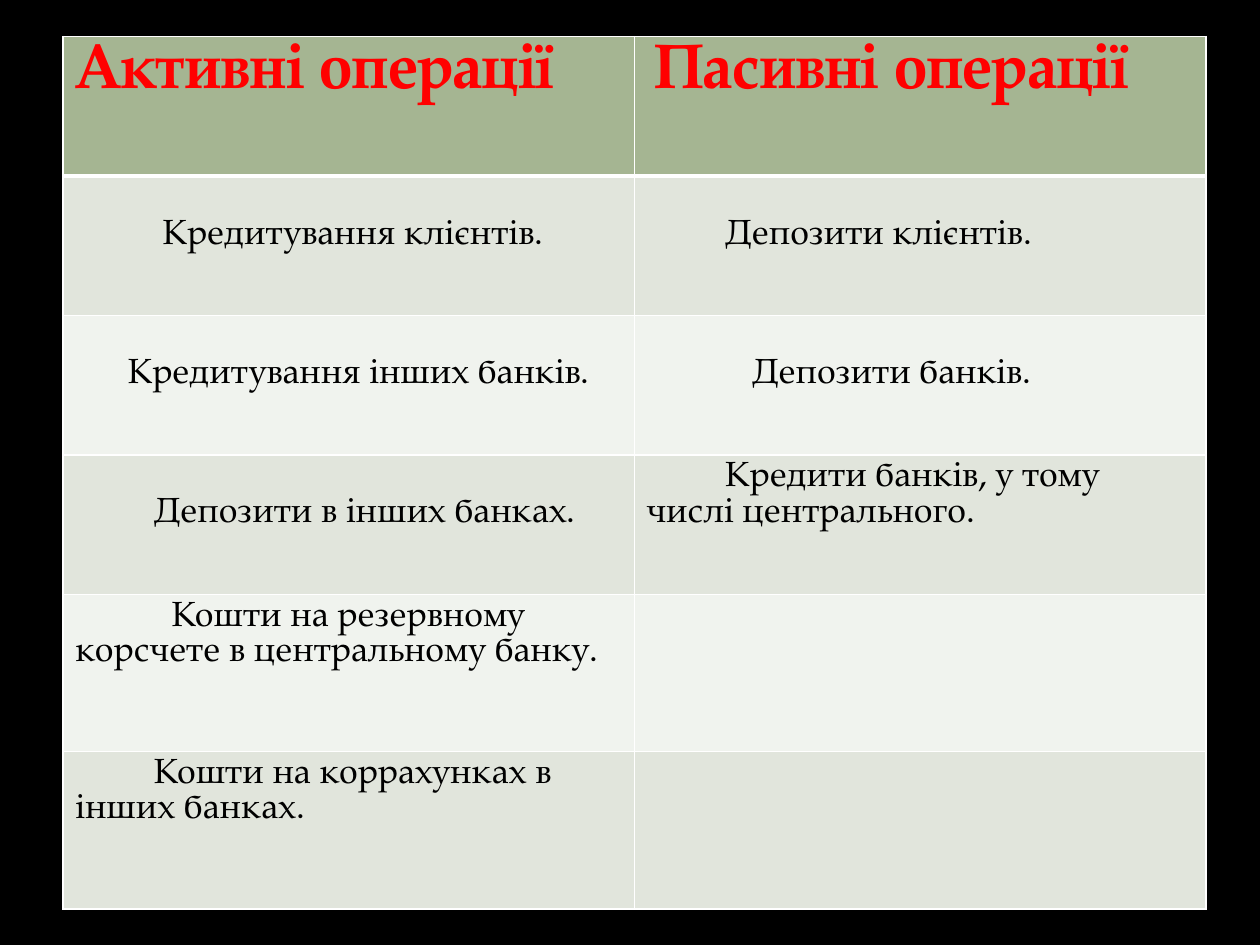
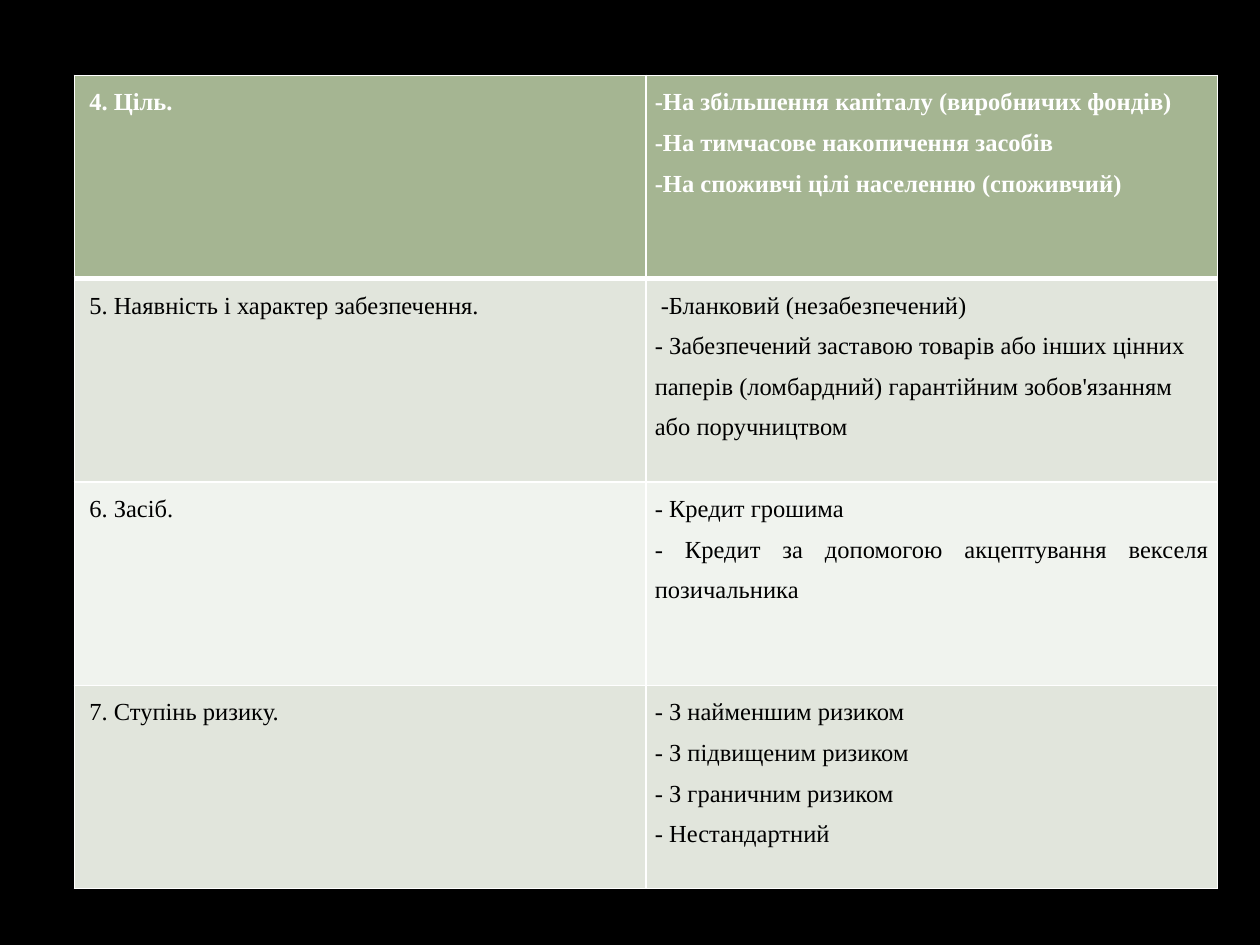
from dataclasses import dataclass

from lxml.etree import SubElement
from pptx import Presentation
from pptx.dml.color import RGBColor
from pptx.enum.text import PP_ALIGN
from pptx.oxml.ns import qn
from pptx.util import Cm, Pt

# Shared look
BLACK = RGBColor(0x00, 0x00, 0x00)
WHITE = RGBColor(0xFF, 0xFF, 0xFF)
RED = RGBColor(0xFF, 0x00, 0x00)
HEADER_GREEN = RGBColor(0xA5, 0xB5, 0x92)
BAND_DARK = RGBColor(0xE1, 0xE5, 0xDC)
BAND_LIGHT = RGBColor(0xF0, 0xF3, 0xEE)
COLUMN_WIDTH = Cm(11.52)
THIN, THICK = Pt(1), Pt(3)


@dataclass
class TableStyle:
    font: str
    header_size: int
    body_size: int
    header_color: RGBColor
    side_margin: float
    top_margin: float
    line_spacing: float


@dataclass
class Entry:
    """Content of one cell: lines, first-line indent and top offset in cm."""
    lines: tuple = ()
    indent: float = 0
    drop: float = 0
    justified: bool = False
    indent_all: bool = False


OPERATIONS_STYLE = TableStyle("TeX Gyre Pagella", 36, 20, RED, 0.25, 0.13, 1.0)
CREDIT_STYLE = TableStyle("Times New Roman", 14, 14, WHITE, 0.18, 0, 1.5)

LINE_DROP = 0.73  # height of one body line on the operations slide
OPERATIONS = [
    (Entry(("Активні операції",)),
     Entry(("Пасивні операції",), 0.16)),
    (Entry(("Кредитування клієнтів.",), 1.76, LINE_DROP),
     Entry(("Депозити клієнтів.",), 1.58, LINE_DROP)),
    (Entry(("Кредитування інших банків.",), 1.06, LINE_DROP),
     Entry(("Депозити банків.",), 2.12, LINE_DROP)),
    (Entry(("Депозити в інших банках.",), 1.58, LINE_DROP),
     Entry(("Кредити банків, у тому числі центрального.",), 1.58)),
    (Entry(("Кошти на резервному корсчете в центральному банку.",), 1.94),
     Entry()),
    (Entry(("Кошти на коррахунках в", "інших банках."), 1.58),
     Entry()),
]

LABEL_INDENT = 0.12
CREDIT_TYPES = [
    (Entry(("4. Ціль.",), LABEL_INDENT),
     Entry(("-На збільшення капіталу (виробничих фондів)",
            "-На тимчасове накопичення засобів",
            "-На споживчі цілі населенню (споживчий)"))),
    (Entry(("5. Наявність і характер забезпечення.",), LABEL_INDENT),
     Entry(("-Бланковий (незабезпечений)",
            "- Забезпечений заставою товарів або інших цінних паперів "
            "(ломбардний) гарантійним зобов'язанням або поручництвом"),
           LABEL_INDENT)),
    (Entry(("6. Засіб.",), LABEL_INDENT),
     Entry(("- Кредит грошима",
            "- Кредит за допомогою акцептування векселя позичальника"),
           justified=True)),
    (Entry(("7. Ступінь ризику.",), LABEL_INDENT),
     Entry(("- З найменшим ризиком", "- З підвищеним ризиком",
            "- З граничним ризиком", "- Нестандартний"), justified=True)),
]


def set_borders(cell, row):
    """White cell borders, with a heavy rule under the header row."""
    widths = {"a:lnL": THIN, "a:lnR": THIN,
              "a:lnT": THICK if row == 1 else THIN,
              "a:lnB": THICK if row == 0 else THIN}
    properties = cell._tc.get_or_add_tcPr()
    for tag, width in widths.items():
        line = SubElement(properties, qn(tag), w=str(width))
        fill = SubElement(line, qn("a:solidFill"))
        SubElement(fill, qn("a:srgbClr"), val=str(WHITE))


def fill_cell(cell, entry, row, style):
    is_header = row == 0
    set_borders(cell, row)
    cell.fill.solid()
    cell.fill.fore_color.rgb = (
        HEADER_GREEN if is_header else BAND_DARK if row % 2 else BAND_LIGHT)
    cell.margin_left = cell.margin_right = Cm(style.side_margin)
    cell.margin_top = Cm(style.top_margin + entry.drop)
    cell.margin_bottom = Cm(style.top_margin)

    for number, line in enumerate(entry.lines):
        frame = cell.text_frame
        paragraph = frame.add_paragraph() if number else frame.paragraphs[0]
        paragraph.line_spacing = style.line_spacing
        paragraph.alignment = PP_ALIGN.JUSTIFY if entry.justified else PP_ALIGN.LEFT
        if number == 0 and entry.indent:
            paragraph._p.get_or_add_pPr().set("indent", str(Cm(entry.indent)))
        run = paragraph.add_run()
        run.text = line
        run.font.name = style.font
        run.font.size = Pt(style.header_size if is_header else style.body_size)
        run.font.bold = is_header
        run.font.color.rgb = style.header_color if is_header else BLACK


def add_table_slide(prs, entries, style, left, top, row_heights):
    slide = prs.slides.add_slide(prs.slide_layouts[6])
    table = slide.shapes.add_table(
        len(entries), 2, left, top, COLUMN_WIDTH * 2, sum(row_heights)).table
    for column in table.columns:
        column.width = COLUMN_WIDTH
    for row, (pair, height) in enumerate(zip(entries, row_heights)):
        table.rows[row].height = height
        for column, entry in enumerate(pair):
            fill_cell(table.cell(row, column), entry, row, style)


def main():
    prs = Presentation()
    prs.slide_width, prs.slide_height = Cm(25.4), Cm(19.05)
    background = prs.slide_master.background.fill
    background.solid()
    background.fore_color.rgb = BLACK

    # Active and passive operations
    add_table_slide(prs, OPERATIONS, OPERATIONS_STYLE, Cm(1.27), Cm(0.74),
                    [Cm(2.81)] * 4 + [Cm(3.17)] * 2)
    # Credit types by purpose, security, means and risk
    add_table_slide(prs, CREDIT_TYPES, CREDIT_STYLE, Cm(1.5), Cm(1.52),
                    [Cm(4.1)] * 4)
    prs.save("out.pptx")


if __name__ == "__main__":
    main()
